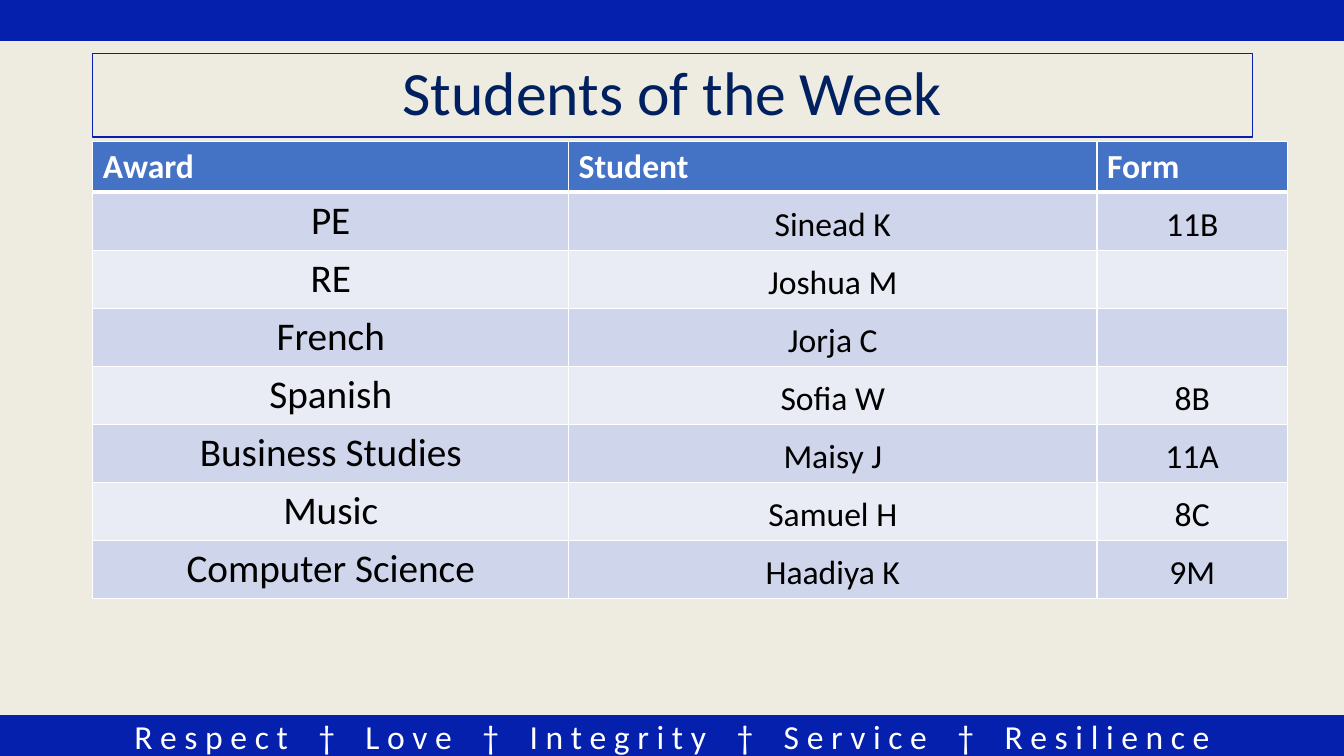
"""Build the Students of the Week slide with its awards table and values banner."""
from lxml import etree
from pptx import Presentation
from pptx.dml.color import RGBColor
from pptx.enum import shapes, text
from pptx.oxml import ns
from pptx.util import Inches, Pt

ROYAL = RGBColor(0x04, 0x20, 0xAC)
NAVY = RGBColor(0x00, 0x20, 0x60)
CREAM = RGBColor(0xEE, 0xEC, 0xE1)
WHITE = RGBColor(0xFF, 0xFF, 0xFF)
BLACK = RGBColor(0x00, 0x00, 0x00)
HEADER_BLUE = RGBColor(0x44, 0x72, 0xC4)
BAND_DARK = RGBColor(0xCF, 0xD5, 0xEA)
BAND_LIGHT = RGBColor(0xE9, 0xEB, 0xF5)

VALUES = ["Respect", "Love", "Integrity", "Service", "Resilience"]
AWARDS = [
    ("Award", "Student", "Form"),
    ("PE", "Sinead K", "11B"),
    ("RE", "Joshua M", ""),
    ("French", "Jorja C", ""),
    ("Spanish", "Sofia W", "8B"),
    ("Business Studies", "Maisy J", "11A"),
    ("Music", "Samuel H", "8C"),
    ("Computer Science", "Haadiya K", "9M"),
]


def add_box(left, top, width, height, line_width):
    box = slide.shapes.add_shape(shapes.MSO_SHAPE.RECTANGLE, Inches(left), Inches(top),
                                 Inches(width), Inches(height))
    box.shadow.inherit = False
    box.line.color.rgb = ROYAL
    box.line.width = Pt(line_width)
    box.text_frame.vertical_anchor = text.MSO_ANCHOR.MIDDLE
    return box


def set_font(paragraph, size, color, bold=False):
    paragraph.font.name = "Calibri"
    paragraph.font.size = Pt(size)
    paragraph.font.color.rgb = color
    paragraph.font.bold = bold


prs = Presentation()
prs.slide_width = Inches(13.33)
prs.slide_height = Inches(7.5)
slide = prs.slides.add_slide(prs.slide_layouts[6])
slide.background.fill.solid()
slide.background.fill.fore_color.rgb = CREAM

footer = add_box(0, 7.1, 13.33, 0.4, 1)
header = add_box(0, 0, 13.33, 0.4, 1)
for banner in (footer, header):
    banner.fill.solid()
    banner.fill.fore_color.rgb = ROYAL

motto = footer.text_frame.paragraphs[0]
motto.alignment = text.PP_ALIGN.CENTER
set_font(motto, 24, WHITE)
for index, value in enumerate(VALUES):
    for piece in ([" ", "†", " "] if index else []) + [" ".join(value)]:
        run = motto.add_run()
        run.text = piece
        if piece == " ":
            run.font._element.set("spc", "1630")

title = add_box(0.92, 0.53, 11.5, 0.83, 0.75)
title.fill.background()
heading = title.text_frame.paragraphs[0]
heading.text = "Students of the Week"
heading.alignment = text.PP_ALIGN.CENTER
heading.line_spacing = 0.9
set_font(heading, 44, NAVY)

awards = slide.shapes.add_table(len(AWARDS), 3, Inches(0.92), Inches(1.4),
                                Inches(11.85), Inches(4.5)).table
for column, width in zip(awards.columns, (4.72, 5.24, 1.89)):
    column.width = Inches(width)

for row, record in enumerate(AWARDS):
    awards.rows[row].height = Inches(0.57 if row else 0.5)
    for col, entry in enumerate(record):
        cell = awards.cell(row, col)
        cell.text = entry
        label = cell.text_frame.paragraphs[0]
        if row == 0:
            set_font(label, 24, WHITE, bold=True)
        else:
            label.alignment = text.PP_ALIGN.CENTER
            set_font(label, 24 if col else 28, BLACK)
            if col and entry:
                cell.vertical_anchor = text.MSO_ANCHOR.BOTTOM
                cell.margin_left = cell.margin_right = cell.margin_top = Inches(0.01)

        properties = cell._tc.get_or_add_tcPr()
        for side in ("lnL", "lnR", "lnT", "lnB"):
            heavy = (row, side) in ((0, "lnB"), (1, "lnT"))
            border = etree.SubElement(properties, ns.qn(f"a:{side}"), w=str(Pt(3 if heavy else 1)))
            paint = etree.SubElement(border, ns.qn("a:solidFill"))
            etree.SubElement(paint, ns.qn("a:srgbClr"), val=str(WHITE))
        cell.fill.solid()
        cell.fill.fore_color.rgb = (BAND_DARK if row % 2 else BAND_LIGHT) if row else HEADER_BLUE

prs.save("out.pptx")
